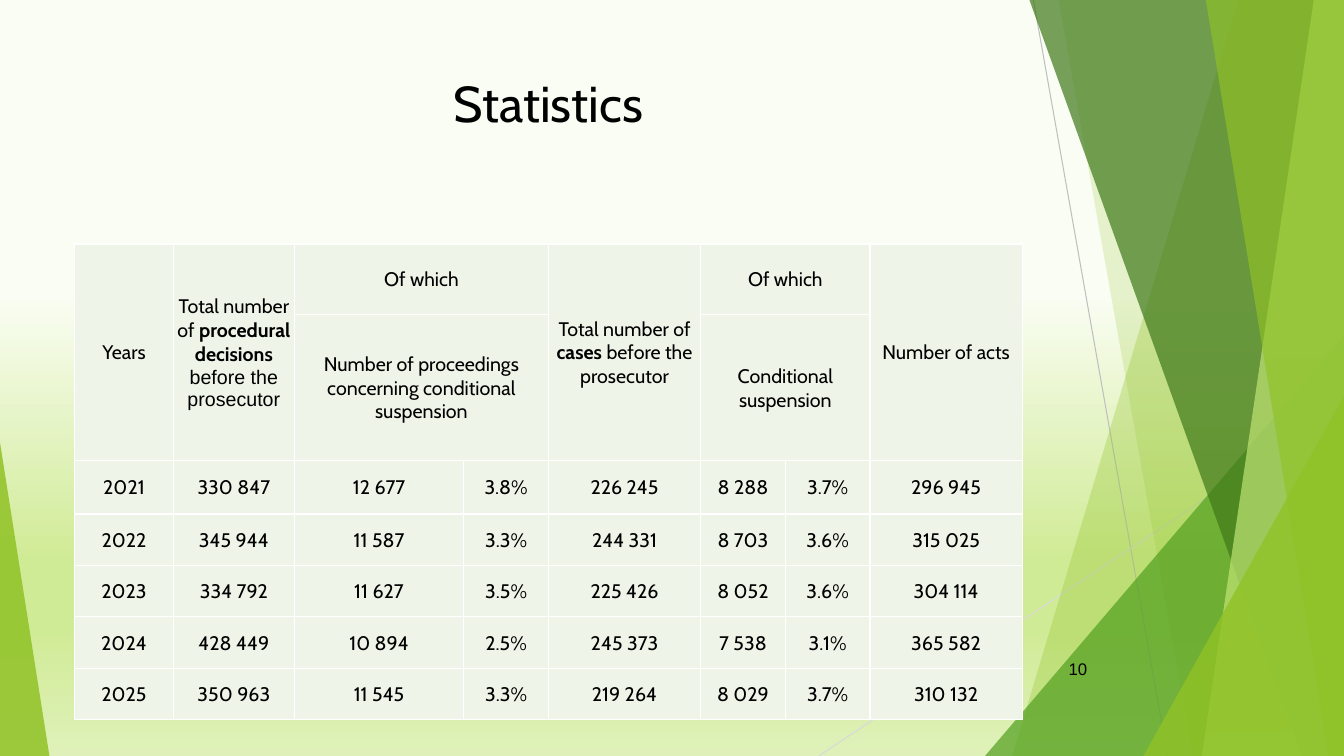
from dataclasses import dataclass

from lxml import etree
from pptx import Presentation
from pptx.dml.color import RGBColor
from pptx.enum.shapes import MSO_CONNECTOR, MSO_SHAPE
from pptx.enum.text import MSO_ANCHOR, MSO_AUTO_SIZE, PP_ALIGN
from pptx.oxml.ns import qn
from pptx.util import Inches, Pt

STRAIGHT = MSO_CONNECTOR.STRAIGHT
TRIANGLE = MSO_SHAPE.ISOSCELES_TRIANGLE
CENTER, LEFT = PP_ALIGN.CENTER, PP_ALIGN.LEFT
TOP, MIDDLE = MSO_ANCHOR.TOP, MSO_ANCHOR.MIDDLE
NO_FIT = MSO_AUTO_SIZE.NONE
WIDTH, HEIGHT = 13.33, 7.5


@dataclass(frozen=True)
class Theme:
    font: str = "Cabin"
    plain_font: str = "Arial"
    title_size: int = 36
    table_size: int = 14
    number_size: int = 12
    text: str = "000000"
    cell: str = "EEF4E8"
    border: str = "FFFFFF"
    lime: str = "90C226"
    green: str = "54A021"
    dark_green: str = "3F7819"
    pale_lime: str = "C0E474"
    line: str = "BFBFBF"
    pale_line: str = "D9D9D9"
    background: tuple = ((39, "FAFDF3"), (74, "D0EB96"), (83, "D0EB96"), (100, "DFF1B9"))


THEME = Theme()


def write(frame, text, font=THEME.font, size=THEME.table_size, color=THEME.text, align=CENTER):
    """Add one paragraph per line; **double stars** mark bold words."""
    for line in text.split("\n"):
        paragraph = frame.add_paragraph() if frame.text else frame.paragraphs[0]
        paragraph.alignment = align
        for index, part in enumerate(line.split("**")):
            if part:
                run = paragraph.add_run()
                run.text = part
                run.font.name = font
                run.font.size = Pt(size)
                run.font.bold = index % 2 == 1
                run.font.color.rgb = RGBColor.from_string(color)


class SlideBuilder:
    def __init__(self, slide, theme):
        self.slide = slide
        self.shapes = slide.shapes
        self.theme = theme

    def background(self):
        fill = self.slide.background.fill
        fill.gradient()
        fill.gradient_angle = 270
        stops = next(self.slide.element.iter(qn("a:gsLst")))
        for stop in list(stops):
            stops.remove(stop)
        for percent, color in self.theme.background:
            stop = etree.SubElement(stops, qn("a:gs"), pos=str(percent * 1000))
            etree.SubElement(stop, qn("a:srgbClr"), val=color)

    def line(self, start, end, color):
        points = [Inches(value) for value in (*start, *end)]
        connector = self.shapes.add_connector(STRAIGHT, *points)
        connector.line.color.rgb = RGBColor.from_string(color)
        connector.line.width = Pt(0.75)
        etree.SubElement(connector.element.spPr, qn("a:effectLst"))

    def paint(self, shape, color, opacity):
        shape.shadow.inherit = False
        shape.line.fill.background()
        shape.fill.solid()
        shape.fill.fore_color.rgb = RGBColor.from_string(color)
        tint = shape.element.spPr.find(qn("a:solidFill"))[0]
        etree.SubElement(tint, qn("a:alpha"), val=str(opacity * 1000))

    def band(self, top_x, bottom_x, color, opacity):
        """A full-height band from a slanted left edge to the slide's right edge."""
        outline = self.shapes.build_freeform(Inches(top_x), 0)
        corners = ((WIDTH, 0), (WIDTH, HEIGHT), (bottom_x, HEIGHT))
        outline.add_line_segments([(Inches(x), Inches(y)) for x, y in corners])
        self.paint(outline.convert_to_shape(), color, opacity)

    def corner(self, left, top, width, apex, color, opacity):
        """A right triangle standing on the slide's bottom edge."""
        box = [Inches(value) for value in (left, top, width, HEIGHT - top)]
        triangle = self.shapes.add_shape(TRIANGLE, *box)
        triangle.adjustments[0] = apex
        self.paint(triangle, color, opacity)

    def title(self, text):
        title = self.shapes.title
        title.left, title.top = Inches(0.74), Inches(0.67)
        title.width, title.height = Inches(9.4), Inches(1.44)
        title.text_frame.auto_size = NO_FIT
        title.text_frame.vertical_anchor = TOP
        write(title.text_frame, text, size=self.theme.title_size)

    def page_number(self, text):
        box = self.shapes.add_textbox(Inches(10.5), Inches(6.49), Inches(0.39), Inches(0.3))
        box.text_frame.word_wrap = False
        write(box.text_frame, text, font=self.theme.plain_font,
              size=self.theme.number_size, align=LEFT)

    def style_cell(self, cell):
        cell.fill.solid()
        cell.fill.fore_color.rgb = RGBColor.from_string(self.theme.cell)
        cell.vertical_anchor = MIDDLE
        cell.margin_left = cell.margin_right = cell.margin_top = Inches(0.01)
        cell.margin_bottom = 0
        properties = cell._tc.get_or_add_tcPr()
        for position, side in enumerate(("a:lnL", "a:lnR", "a:lnT", "a:lnB")):
            border = etree.Element(qn(side), w=str(Pt(1)))
            fill = etree.SubElement(border, qn("a:solidFill"))
            etree.SubElement(fill, qn("a:srgbClr"), val=self.theme.border)
            properties.insert(position, border)

    def table(self, widths, heights, headers, records):
        frame = self.shapes.add_table(len(heights), len(widths), Inches(0.74), Inches(2.42),
                                      Inches(sum(widths)), Inches(sum(heights)))
        table = frame.table
        table.first_row = table.horz_banding = False
        for column, width in zip(table.columns, widths):
            column.width = Inches(width)
        for row, height in zip(table.rows, heights):
            row.height = Inches(height)
        for cell in table.iter_cells():
            self.style_cell(cell)
        for row, column, row_span, column_span, text, plain_text in headers:
            cell = table.cell(row, column)
            cell.merge(table.cell(row + row_span - 1, column + column_span - 1))
            write(cell.text_frame, text)
            if plain_text:
                write(cell.text_frame, plain_text, font=self.theme.plain_font)
        for row, record in enumerate(records, start=len(heights) - len(records)):
            for column, value in enumerate(record):
                write(table.cell(row, column).text_frame, value)


# Row, column, row span, column span, text, text in the plain font
HEADERS = (
    (0, 0, 2, 1, "Years", ""),
    (0, 1, 2, 1, "Total number of **procedural decisions**", "before the\nprosecutor"),
    (0, 2, 1, 2, "Of which", ""),
    (0, 4, 2, 1, "Total number of **cases** before the prosecutor", ""),
    (0, 5, 1, 2, "Of which", ""),
    (0, 7, 2, 1, "Number of acts", ""),
    (1, 2, 1, 2, "Number of proceedings concerning conditional suspension", ""),
    (1, 5, 1, 2, "Conditional suspension", ""),
)
RECORDS = (
    ("2021", "330 847", "12 677", "3.8%", "226 245", "8 288", "3.7%", "296 945"),
    ("2022", "345 944", "11 587", "3.3%", "244 331", "8 703", "3.6%", "315 025"),
    ("2023", "334 792", "11 627", "3.5%", "225 426", "8 052", "3.6%", "304 114"),
    ("2024", "428 449", "10 894", "2.5%", "245 373", "7 538", "3.1%", "365 582"),
    ("2025", "350 963", "11 545", "3.3%", "219 264", "8 029", "3.7%", "310 132"),
)
COLUMN_WIDTHS = (0.98, 1.2, 1.68, 0.84, 1.51, 0.84, 0.84, 1.51)
ROW_HEIGHTS = (0.7, 1.45, 0.53) + (0.51,) * 4


def main():
    deck = Presentation()
    deck.slide_width, deck.slide_height = Inches(WIDTH), Inches(HEIGHT)
    page = SlideBuilder(deck.slides.add_slide(deck.slide_layouts[5]), THEME)

    # Green backdrop, from back to front
    page.background()
    page.line((10.25, 0), (11.58, HEIGHT), THEME.line)
    page.line((WIDTH, 4.03), (8.12, HEIGHT), THEME.pale_line)
    page.band(12.28, 10.04, THEME.lime, 30)
    page.band(10.5, 11.83, THEME.lime, 20)
    page.corner(9.77, 3.33, 3.56, 1, THEME.green, 72)
    page.band(10.21, 12.91, THEME.dark_green, 70)
    page.band(13.03, 11.92, THEME.pale_lime, 70)
    page.band(11.96, 13.18, THEME.lime, 65)
    page.corner(11.34, 3.93, 1.99, 1, THEME.lime, 80)
    page.corner(0, 4.39, 0.49, 0, THEME.lime, 85)

    # Title, statistics and page number
    page.title("Statistics")
    page.table(COLUMN_WIDTHS, ROW_HEIGHTS, HEADERS, RECORDS)
    page.page_number("10")

    deck.save("out.pptx")


if __name__ == "__main__":
    main()
